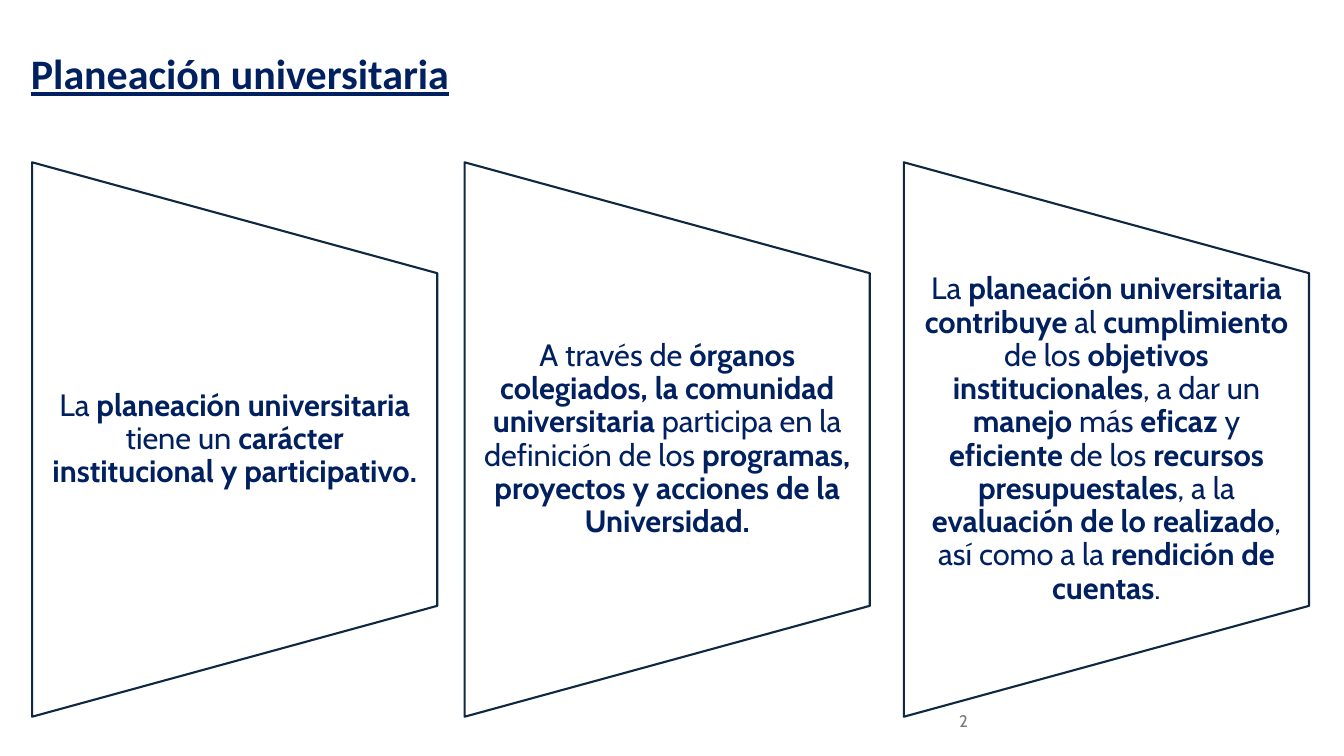
from pptx import Presentation
from pptx.dml.color import RGBColor
from pptx.enum.shapes import MSO_SHAPE
from pptx.enum.text import MSO_ANCHOR, PP_ALIGN
from pptx.util import Cm, Pt

TRAPEZOID = MSO_SHAPE.FLOWCHART_MANUAL_OPERATION
MIDDLE = MSO_ANCHOR.MIDDLE
LEFT, CENTER, RIGHT = PP_ALIGN.LEFT, PP_ALIGN.CENTER, PP_ALIGN.RIGHT

NAVY, OUTLINE, WHITE, GRAY = "002060", "0E2841", "FFFFFF", "797979"
PANEL_TOP, PANEL_WIDTH, PANEL_HEIGHT = 4.09, 10.21, 13.97
PANELS = [
    (0.81, "La *planeación universitaria *tiene un *carácter institucional y participativo."),
    (11.71, "A través de *órganos colegiados, la comunidad universitaria *participa en la "
            "definición de los *programas, proyectos y acciones de la Universidad."),
    (22.78, "La *planeación universitaria contribuye* al *cumplimiento* de los "
            "*objetivos institucionales*, a dar un *manejo* más *eficaz* y *eficiente* de los "
            "*recursos presupuestales*, a la *evaluación de lo realizado*, así como a la "
            "*rendición de cuentas*."),
]


def color(value):
    return RGBColor.from_string(value)


def add_text_frame(slide, left, top, width, height, alignment):
    box = slide.shapes.add_textbox(Cm(left), Cm(top), Cm(width), Cm(height))
    text_frame = box.text_frame
    text_frame.word_wrap = True
    text_frame.vertical_anchor = MIDDLE
    text_frame.paragraphs[0].alignment = alignment
    return text_frame


def set_font(font, name, size, value):
    font.name = name
    font.size = Pt(size)
    font.color.rgb = color(value)


def add_title(slide, left, top, width, height):
    text_frame = add_text_frame(slide, left, top, width, height, LEFT)
    text_frame.text = "Planeación universitaria"
    paragraph = text_frame.paragraphs[0]
    paragraph.line_spacing = 0.9
    font = paragraph.runs[0].font
    set_font(font, "Calibri", 30, NAVY)
    font.bold = True
    font.underline = True


def add_page_number(slide, left, top, width, height):
    text_frame = add_text_frame(slide, left, top, width, height, RIGHT)
    text_frame.text = "2"
    set_font(text_frame.paragraphs[0].runs[0].font, "Cabin", 12, GRAY)


def add_panel(slide, left, top, width, height, text):
    shape = slide.shapes.add_shape(
        TRAPEZOID,
        Cm(left + (width - height) / 2), Cm(top + (height - width) / 2),
        Cm(height), Cm(width),
    )
    shape.rotation = 270
    shape.shadow.inherit = False
    shape.fill.solid()
    shape.fill.fore_color.rgb = color(WHITE)
    shape.line.color.rgb = color(OUTLINE)
    shape.line.width = Pt(1.5)

    text_frame = add_text_frame(slide, left, top + height * 0.2, width, height * 0.6, CENTER)
    text_frame.margin_left = text_frame.margin_right = Cm(0.38)
    text_frame.margin_top = text_frame.margin_bottom = 0
    paragraph = text_frame.paragraphs[0]
    paragraph.line_spacing = 0.9
    for index, part in enumerate(text.split("*")):
        run = paragraph.add_run()
        run.text = part
        set_font(run.font, "Cabin", 22, NAVY)
        run.font.bold = index % 2 == 1


def main():
    presentation = Presentation()
    presentation.slide_width = Cm(33.87)
    presentation.slide_height = Cm(19.05)
    slide = presentation.slides.add_slide(presentation.slide_layouts[6])
    add_title(slide, 0.53, 0.08, 21.39, 3.68)
    add_page_number(slide, 23.92, 17.66, 7.62, 1.01)
    for left, text in PANELS:
        add_panel(slide, left, PANEL_TOP, PANEL_WIDTH, PANEL_HEIGHT, text)
    presentation.save("out.pptx")


if __name__ == "__main__":
    main()
